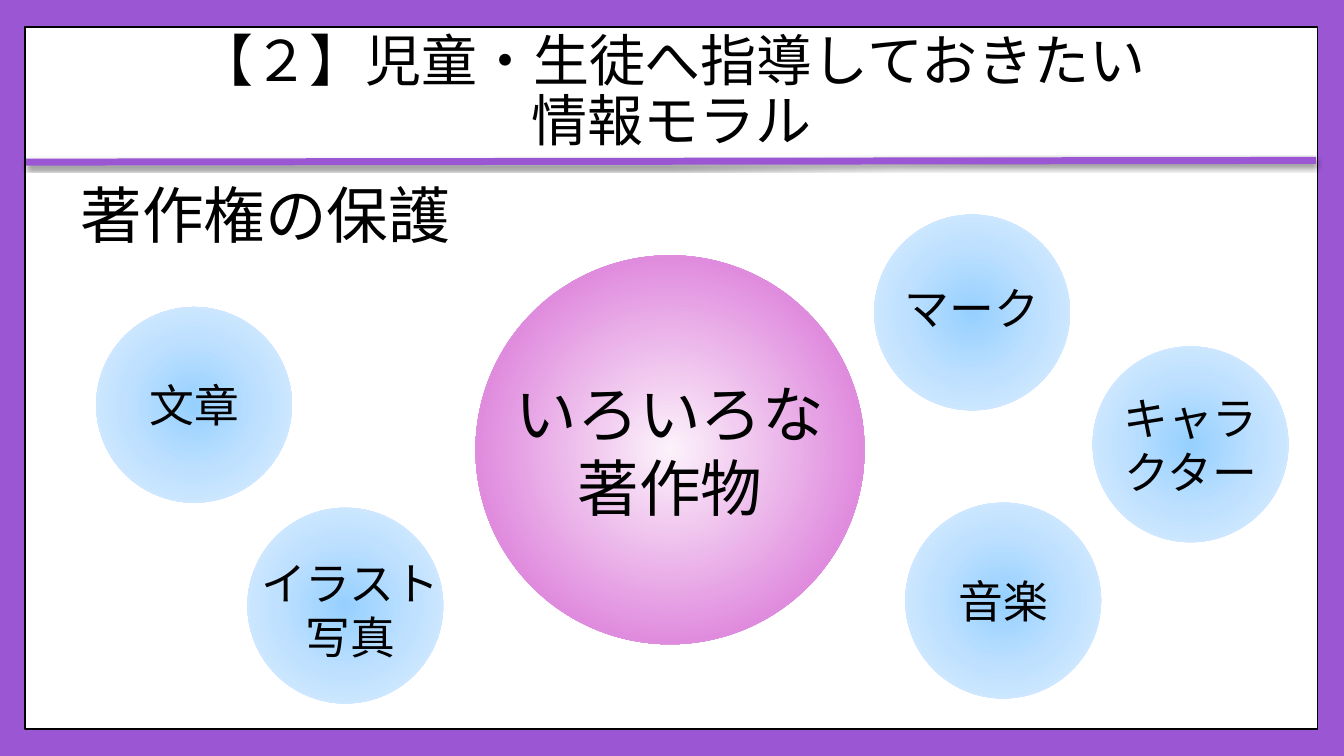
from lxml.etree import SubElement
from pptx import Presentation
from pptx.dml.color import RGBColor
from pptx.enum.shapes import MSO_CONNECTOR, MSO_SHAPE
from pptx.enum.text import MSO_ANCHOR, PP_ALIGN
from pptx.oxml.ns import qn
from pptx.util import Inches, Pt

PURPLE, WHITE, BLACK = "9B57D3", "FFFFFF", "000000"
PINK_STOPS = [(0, "FCF2FB"), (70, "E08CDE"), (83, "E08CDE"), (100, "EAB2E9")]
BLUE_STOPS = [(0, "96D0FF"), (50, "BFE1FF"), (100, "E0EFFF")]

presentation = Presentation()
presentation.slide_width, presentation.slide_height = Inches(13.33), Inches(7.5)
slide = presentation.slides.add_slide(presentation.slide_layouts[6])
# Grid of 160 columns by 90 rows, with square cells
CELL = presentation.slide_height / 90


def paint(color_format, color):
    color_format.rgb = RGBColor.from_string(color)


def add_text(left, top, width, height, paragraphs, size, font="Arial",
             align=PP_ALIGN.CENTER, anchor=MSO_ANCHOR.MIDDLE, spacing=1.0):
    """Place a text box; each paragraph is a list of lines."""
    box = slide.shapes.add_textbox(*(round(n * CELL) for n in (left, top, width, height)))
    frame = box.text_frame
    frame.word_wrap = True
    frame.vertical_anchor = anchor
    frame.margin_top = frame.margin_bottom = Inches(0.05)
    for index, lines in enumerate(paragraphs):
        paragraph = frame.add_paragraph() if index else frame.paragraphs[0]
        paragraph.alignment = align
        paragraph.line_spacing = spacing
        for number, line in enumerate(lines):
            if number:
                paragraph.add_line_break()
            run = paragraph.add_run()
            run.text = line
            run.font.size = Pt(size)
            run.font.name = font
            SubElement(run.font._element, qn("a:ea"), typeface=font)
            paint(run.font.color, BLACK)
    return frame


# Purple border and white page
slide.background.fill.solid()
paint(slide.background.fill.fore_color, PURPLE)
page = slide.shapes.add_shape(
    MSO_SHAPE.RECTANGLE, *(round(n * CELL) for n in (3, 3.2, 153.8, 83.6)))
page.shadow.inherit = False
page.fill.solid()
paint(page.fill.fore_color, WHITE)
paint(page.line.color, BLACK)
page.line.width = Pt(1)

# Rule under the title, with a soft shadow
rule = slide.shapes.add_connector(
    MSO_CONNECTOR.STRAIGHT, *(round(n * CELL) for n in (3.1, 19.3, 156.6, 19.1)))
paint(rule.line.color, PURPLE)
rule.line.width = Pt(5)
effects = SubElement(rule._element.spPr, qn("a:effectLst"))
shadow = SubElement(effects, qn("a:outerShdw"), blurRad=str(Pt(3)), dist=str(Pt(2)),
                    dir="5400000", rotWithShape="0")
shadow_color = SubElement(shadow, qn("a:srgbClr"), val=BLACK)
SubElement(shadow_color, qn("a:alpha"), val="45000")

# Title and heading
add_text(3.1, 4.3, 153.6, 13.7, [["【２】児童・生徒へ指導しておきたい", "情報モラル"]],
         40, font="Cabin", spacing=0.9)
heading = add_text(7.8, 21.5, 144, 64.1, [["著作権の保護"]], 44,
                   align=PP_ALIGN.LEFT, anchor=MSO_ANCHOR.TOP, spacing=0.9)
heading.paragraphs[0].space_before = Pt(14)
heading.paragraphs[0]._p.get_or_add_pPr().set("marL", str(Inches(0.05)))

# Bubbles: centre, diameter, stops, label shift, label width, size, paragraphs
bubbles = [
    (79.75, 53.55, 46.3, PINK_STOPS, (0, 0), 39.7, 44, [["いろいろな"], ["著作物"]]),
    (23.1, 48.2, 23.3, BLUE_STOPS, (0, 0), 17.3, 32, [["文章"]]),
    (115.7, 37.2, 23.3, BLUE_STOPS, (0, -0.6), 19.2, 32, [["マーク"]]),
    (141.7, 52.9, 23.3, BLUE_STOPS, (0, 0), 19.2, 32, [["キャラクター"]]),
    (119.4, 71.5, 23.3, BLUE_STOPS, (0, 0), 17.3, 32, [["音楽"]]),
    (41.1, 72.1, 23.3, BLUE_STOPS, (0.6, 0.5), 29.9, 32, [["イラスト"], ["写真"]]),
]
LABEL_HEIGHT = 14.2
for x, y, diameter, stops, (shift_x, shift_y), width, size, paragraphs in bubbles:
    radius = diameter / 2
    bubble = slide.shapes.add_shape(
        MSO_SHAPE.OVAL,
        *(round(n * CELL) for n in (x - radius, y - radius, diameter, diameter)))
    bubble.shadow.inherit = False
    bubble.line.fill.background()
    bubble.fill.gradient()

    # Radial gradient from the centre outwards
    gradient = bubble._element.spPr.find(qn("a:gradFill"))
    for child in list(gradient):
        gradient.remove(child)
    stop_list = SubElement(gradient, qn("a:gsLst"))
    for position, color in stops:
        stop = SubElement(stop_list, qn("a:gs"), pos=str(position * 1000))
        SubElement(stop, qn("a:srgbClr"), val=color)
    radial = SubElement(gradient, qn("a:path"), path="circle")
    SubElement(radial, qn("a:fillToRect"), l="50000", t="50000", r="50000", b="50000")

    add_text(x + shift_x - width / 2, y + shift_y - LABEL_HEIGHT / 2,
             width, LABEL_HEIGHT, paragraphs, size)

presentation.save("out.pptx")
